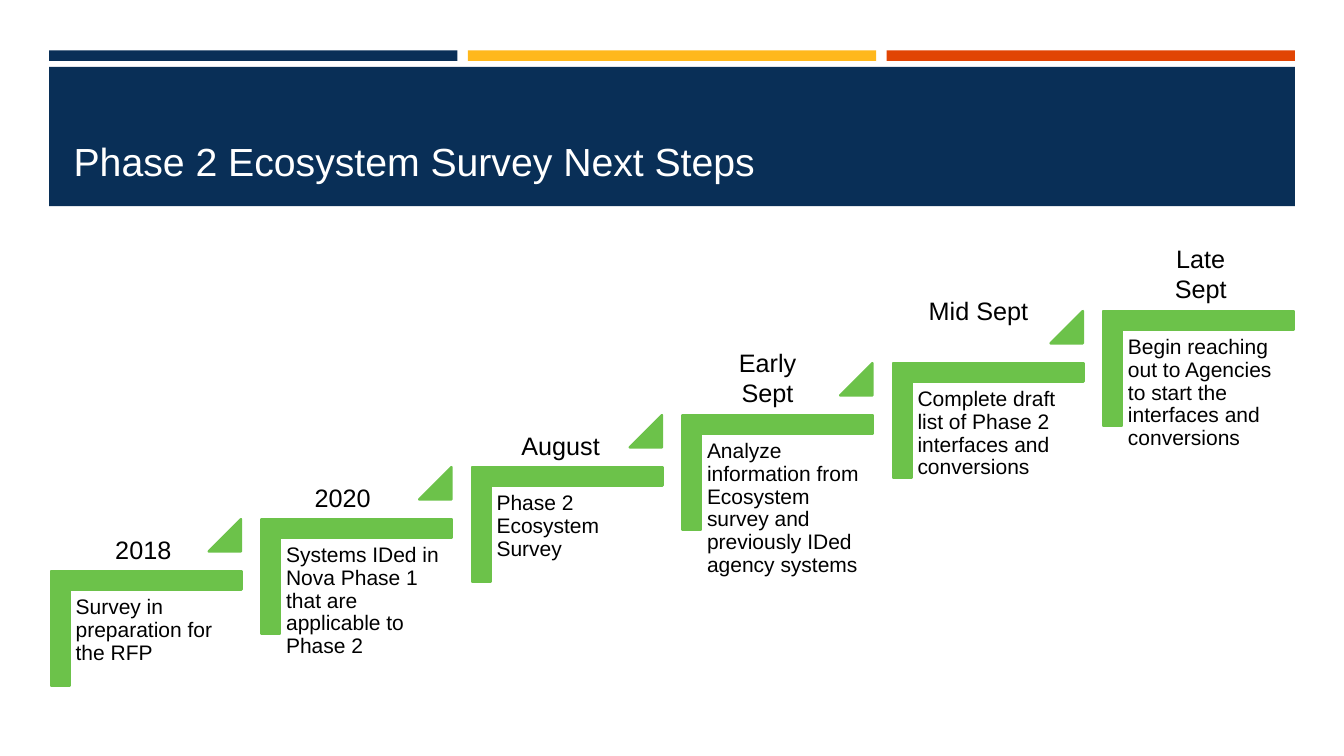
from dataclasses import dataclass

from pptx import Presentation
from pptx.dml.color import RGBColor as Rgb
from pptx.enum.shapes import MSO_SHAPE as Kind
from pptx.enum.text import MSO_ANCHOR as Anchor, MSO_AUTO_SIZE as Fit, PP_ALIGN as Align
from pptx.util import Inches, Pt

WIDE, HIGH = Inches(13.33), Inches(7.5)
HUES = {"navy": "092F57", "gold": "FFB81C", "rust": "E14504",
        "green": "6CC24A", "white": "FFFFFF", "black": "000000"}
PITCH, RISE = 15.66, 6.88
LINE = 4.13


@dataclass(frozen=True)
class Box:
    """Left, top, width and height in percent of the slide."""
    x: float
    y: float
    w: float
    h: float

    def shift(self, dx: float, dy: float) -> "Box":
        return Box(self.x + dx, self.y + dy, self.w, self.h)

    def emu(self) -> tuple[int, ...]:
        sides = ((self.x, WIDE), (self.y, HIGH), (self.w, WIDE), (self.h, HIGH))
        return tuple(round(part * full / 100) for part, full in sides)


@dataclass(frozen=True)
class Step:
    date: str
    task: str
    rows: int = 1
    nudge: float = 0


BAR = Box(3.65, 6.67, 30.38, 1.4)
BANNER = Box(3.65, 8.86, 92.7, 18.4)
TITLE = Box(4.73, 10.67, 90.47, 14.4)
ANGLE = Box(6.6, 70.53, 8.55, 25.2)
TASK = Box(5.18, 78.13, 12.83, 20)
WEDGE = Box(15.53, 68.67, 2.4, 4.27)
DATE = Box(6.16, 70, 9, 5.33)

STEPS = (
    Step("2018", "Survey in preparation for the RFP"),
    Step("2020", "Systems IDed in Nova Phase 1 that are applicable to Phase 2", nudge=-0.83),
    Step("August", "Phase 2 Ecosystem Survey", nudge=-0.27),
    Step("Early Sept", "Analyze information from Ecosystem survey and previously IDed "
         "agency systems", 2, -0.53),
    Step("Mid Sept", "Complete draft list of Phase 2 interfaces and conversions", 2, -0.5),
    Step("Late Sept", "Begin reaching out to Agencies to start the interfaces and "
         "conversions", 2, 0.38),
)


def write(shape, text: str, *, size: float, hue: str = "black", align=Align.LEFT,
          anchor=Anchor.TOP, inset: float | None = None, space: float = 1,
          fit=Fit.NONE) -> None:
    frame = shape.text_frame
    frame.text = text
    frame.word_wrap = True
    frame.auto_size = fit
    frame.vertical_anchor = anchor
    if inset is not None:
        frame.margin_left = frame.margin_right = Inches(inset)
        frame.margin_top = frame.margin_bottom = Inches(inset)
    para = frame.paragraphs[0]
    para.alignment = align
    para.line_spacing = space
    font = para.runs[0].font
    font.name, font.size = "Arial", Pt(size)
    font.color.rgb = Rgb.from_string(HUES[hue])


def draw(shapes, kind, box: Box, hue: str, line: float = 0):
    shape = shapes.add_shape(kind, *box.emu())
    shape.shadow.inherit = False
    shape.fill.solid()
    shape.fill.fore_color.rgb = Rgb.from_string(HUES[hue])
    if line:
        shape.line.color.rgb = Rgb.from_string(HUES[hue])
        shape.line.width = Pt(line)
    else:
        shape.line.fill.background()
    return shape


def head(slide) -> None:
    for col, hue in enumerate(("navy", "gold", "rust")):
        draw(slide.shapes, Kind.RECTANGLE, BAR.shift(col * 31.16, 0), hue)
    banner = draw(slide.shapes, Kind.RECTANGLE, BANNER, "navy")
    title = slide.shapes.title
    title.left, title.top, title.width, title.height = TITLE.emu()
    write(title, "Phase 2 Ecosystem Survey Next Steps", size=28, hue="white",
          anchor=Anchor.BOTTOM)
    banner.element.addnext(title.element)


def stairs(slide) -> None:
    group = slide.shapes.add_group_shape().shapes
    for col, step in enumerate(STEPS):
        dx, dy = col * PITCH, -col * RISE
        angle = draw(group, Kind.CORNER, ANGLE.shift(dx, dy), "green", 1.75)
        angle.adjustments[0] = angle.adjustments[1] = 0.161
        angle.rotation = 90
        task = group.add_textbox(*TASK.shift(dx, dy).emu())
        write(task, step.task, size=15, inset=0.06, space=0.9)
        if col < len(STEPS) - 1:
            wedge = draw(group, Kind.ISOSCELES_TRIANGLE, WEDGE.shift(dx, dy), "green", 1.75)
            wedge.adjustments[0] = 1


def dates(slide) -> None:
    for col, step in enumerate(STEPS):
        more = (step.rows - 1) * LINE
        spot = DATE.shift(col * PITCH + step.nudge, -col * RISE - more)
        box = Box(spot.x, spot.y, spot.w, spot.h + more)
        label = slide.shapes.add_textbox(*box.emu())
        write(label, step.date, size=18, align=Align.CENTER, fit=Fit.SHAPE_TO_FIT_TEXT)


def main() -> None:
    deck = Presentation()
    deck.slide_width, deck.slide_height = WIDE, HIGH
    slide = deck.slides.add_slide(deck.slide_layouts[5])
    head(slide)
    stairs(slide)
    dates(slide)
    deck.save("out.pptx")


if __name__ == "__main__":
    main()
